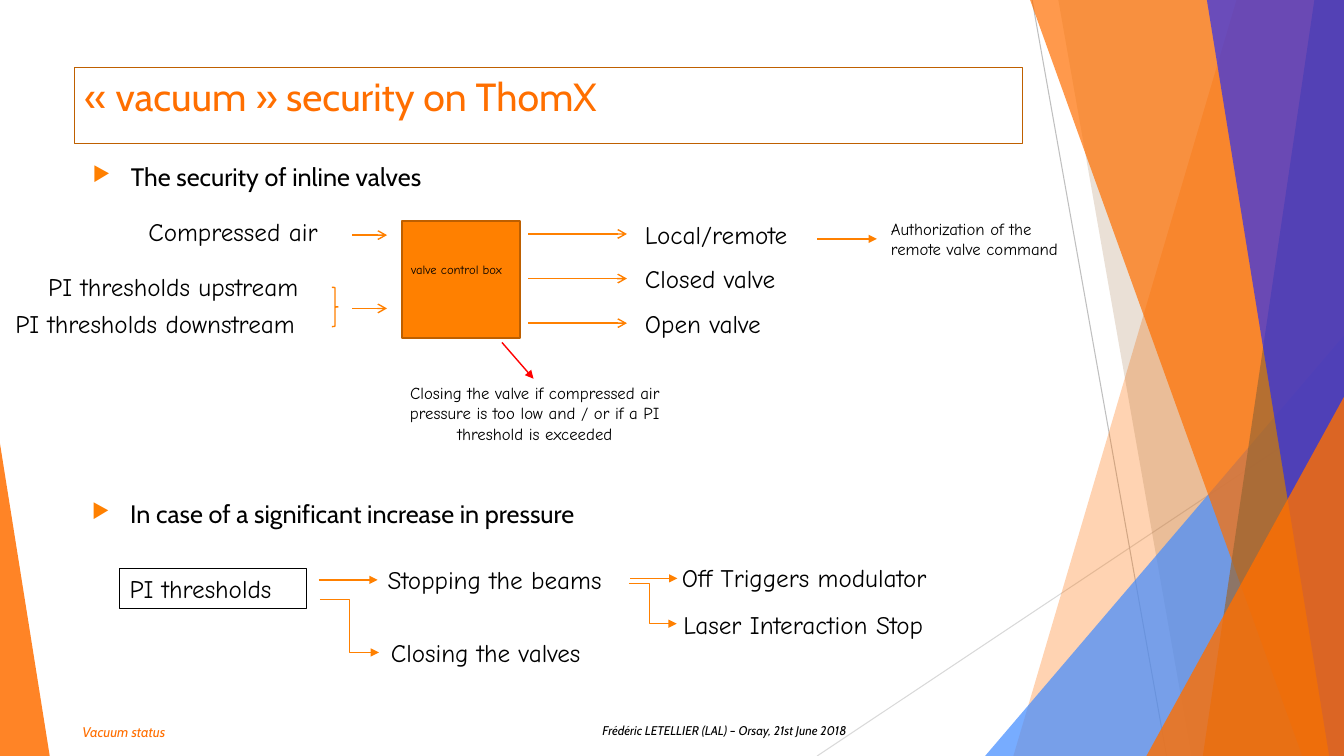
import dataclasses

import pptx
import pptx.dml.color
import pptx.enum.shapes
import pptx.enum.text
import pptx.oxml
import pptx.oxml.ns
import pptx.util

SHAPES = pptx.enum.shapes.MSO_SHAPE
CONNECTORS = pptx.enum.shapes.MSO_CONNECTOR
ALIGN = pptx.enum.text.PP_ALIGN
AUTO_SIZE = pptx.enum.text.MSO_AUTO_SIZE
WIDTH, HEIGHT = pptx.util.Inches(13.333), pptx.util.Inches(7.5)


@dataclasses.dataclass(frozen=True)
class Theme:
    orange: str = "FF6F00"
    flow: str = "FF8000"
    box_edge: str = "BD5F00"
    title_edge: str = "BF6000"
    brown: str = "996633"
    sky: str = "438CFF"
    blue: str = "1F29FD"
    red: str = "FF0000"
    black: str = "000000"
    pale_grey: str = "D9D9D9"
    grey: str = "BFBFBF"
    heading_font: str = "Cabin"
    label_font: str = "Comic Neue"
    title_size: int = 28
    body_size: int = 18
    note_size: int = 12
    footer_size: int = 10
    small_size: int = 9


THEME = Theme()


# Grid: 100 columns by 100 rows over the whole slide
def columns(count):
    return round(WIDTH * count / 100)


def rows(count):
    return round(HEIGHT * count / 100)


def grid_box(left, top, width, height):
    return columns(left), rows(top), columns(width), rows(height)


def color(value):
    return pptx.dml.color.RGBColor.from_string(value)


def add_xml(parent, tag, **attributes):
    element = pptx.oxml.parse_xml(f"<a:{tag} {pptx.oxml.ns.nsdecls('a')}/>")
    for name, value in attributes.items():
        element.set(name, str(value))
    parent.append(element)
    return element


# Text
def add_bullet(paragraph):
    properties = paragraph._element.get_or_add_pPr()
    indent = pptx.util.Inches(0.38)
    properties.set("marL", str(indent))
    properties.set("indent", str(-indent))
    add_xml(add_xml(properties, "buClr"), "srgbClr", val=THEME.flow)
    add_xml(properties, "buSzPct", val=80000)
    add_xml(properties, "buChar", char="▶")


def write_text(shape, text, size=THEME.body_size, font=THEME.label_font, ink=THEME.black,
               italic=False, align=ALIGN.LEFT, bullet=False, fit=AUTO_SIZE.SHAPE_TO_FIT_TEXT):
    frame = shape.text_frame
    frame.word_wrap = True
    frame.auto_size = fit
    frame.vertical_anchor = pptx.enum.text.MSO_ANCHOR.TOP
    frame.text = text
    paragraph = frame.paragraphs[0]
    paragraph.alignment = align
    if bullet:
        add_bullet(paragraph)
    paragraph.font.size = pptx.util.Pt(size)
    paragraph.font.name = font
    paragraph.font.italic = italic
    paragraph.font.color.rgb = color(ink)


def add_label(slide, text, left, top, width, height=5.3, **text_format):
    write_text(slide.shapes.add_textbox(*grid_box(left, top, width, height)), text, **text_format)


# Shapes and lines
def set_outline(shape, ink, weight):
    shape.line.color.rgb = color(ink)
    shape.line.width = pptx.util.Pt(weight)


def add_shape(slide, kind, place, edge, weight, fill=None):
    shape = slide.shapes.add_shape(kind, *grid_box(*place))
    shape.shadow.inherit = False
    if fill:
        shape.fill.solid()
        shape.fill.fore_color.rgb = color(fill)
    else:
        shape.fill.background()
    set_outline(shape, edge, weight)
    return shape


def add_facet(slide, points, fill, opacity):
    corners = [(columns(x), rows(y)) for x, y in points]
    builder = slide.shapes.build_freeform(*corners[0])
    builder.add_line_segments(corners[1:], close=True)
    shape = builder.convert_to_shape()
    shape.shadow.inherit = False
    shape.fill.solid()
    shape.fill.fore_color.rgb = color(fill)
    shape.line.fill.background()
    tint = shape._element.spPr.find(".//" + pptx.oxml.ns.qn("a:srgbClr"))
    add_xml(tint, "alpha", val=opacity * 1000)


def add_line(slide, start, end, ink=THEME.flow, weight=1, arrow=None, kind=CONNECTORS.STRAIGHT):
    connector = slide.shapes.add_connector(
        kind, columns(start[0]), rows(start[1]), columns(end[0]), rows(end[1]))
    set_outline(connector, ink, weight)
    properties = connector._element.spPr
    if arrow:
        add_xml(properties.find(pptx.oxml.ns.qn("a:ln")), "tailEnd", type=arrow)
    add_xml(properties, "effectLst")
    return connector


# Parts of the slide
def add_background(slide):
    add_line(slide, (60.8, 100), (99.9, 53.7), THEME.pale_grey, 0.75)
    add_line(slide, (76.8, 0), (86.8, 100), THEME.grey, 0.75)
    # Each right-hand facet runs from a slanted edge to the slide's right side
    for top_point, bottom, fill, opacity in [
        ((92, 0), 75.4, THEME.orange, 30),
        ((78.75, 0), 88.65, THEME.brown, 20),
        ((100, 44.4), 73.3, THEME.sky, 72),
        ((76.65, 0), 96.9, THEME.orange, 70),
        ((97.8, 0), 89.5, THEME.brown, 70),
        ((89.8, 0), 98.9, THEME.blue, 65),
        ((100, 52.5), 85.3, THEME.orange, 80),
    ]:
        add_facet(slide, [top_point, (bottom, 100), (100, 100), (100, top_point[1])], fill, opacity)
    add_facet(slide, [(0, 58.7), (3.7, 100), (0, 100)], THEME.orange, 85)


def add_title_and_footer(slide):
    title = slide.shapes.title
    title.left, title.top, title.width, title.height = grid_box(5.55, 8.9, 70.5, 10.1)
    set_outline(title, THEME.title_edge, 0.75)
    write_text(title, "« vacuum » security on ThomX", size=THEME.title_size,
               font=THEME.heading_font, ink=THEME.orange, fit=AUTO_SIZE.NONE)
    add_label(slide, "Vacuum status", 5.4, 95.1, 21.75, 3.6, size=THEME.footer_size,
              font=THEME.heading_font, ink=THEME.orange, italic=True)
    add_label(slide, "Frédéric LETELLIER (LAL) – Orsay, 21st June 2018", 35.1, 94.9, 28.6, 3.3,
              size=THEME.small_size, font=THEME.heading_font, italic=True, align=ALIGN.RIGHT)


def add_valve_security(slide):
    add_label(slide, "The security of inline valves", 6.15, 20.7, 31.2, 7.3,
              font=THEME.heading_font, bullet=True, fit=AUTO_SIZE.NONE)
    # Inputs
    add_label(slide, "Compressed air", 10.3, 28, 15.9)
    add_label(slide, "PI thresholds upstream", 2.85, 35.2, 23.7)
    add_label(slide, "PI thresholds downstream", 0.4, 40.1, 26.55)
    add_shape(slide, SHAPES.RIGHT_BRACE, (24.7, 38, 0.45, 5.2), THEME.flow, 1)
    for y in (31.1, 40.8):
        add_line(slide, (26.2, y), (28.8, y), arrow="arrow")
    # Control box
    add_shape(slide, SHAPES.RECTANGLE, (29.9, 29.2, 8.8, 15.5), THEME.box_edge, 1.5, THEME.flow)
    add_label(slide, "valve control box", 29.85, 34, 9.15, 3.35, size=THEME.small_size)
    # Outputs
    for index, output in enumerate(["Local/remote", "Closed valve", "Open valve"]):
        top = 28.3 + 5.9 * index
        add_line(slide, (39.3, top + 2.65), (46.65, top + 2.65), arrow="arrow")
        add_label(slide, output, 47.25, top, 14)
    add_line(slide, (60.8, 31.6), (65.25, 31.6), arrow="triangle")
    add_label(slide, "Authorization of the remote valve command", 65.55, 28.3, 15.15, 6.7,
              size=THEME.note_size)
    add_line(slide, (37.35, 45.3), (39.7, 50.1), THEME.red, arrow="triangle")
    add_label(slide, "Closing the valve if compressed air pressure is too low and / or if a PI "
              "threshold is exceeded", 29.4, 50, 20.8, 9.5, size=THEME.note_size,
              align=ALIGN.CENTER)


def add_pressure_response(slide):
    add_label(slide, "In case of a significant increase in pressure", 6.1, 65.3, 44.85, 5.7,
              font=THEME.heading_font, bullet=True, fit=AUTO_SIZE.NONE)
    thresholds = add_shape(slide, SHAPES.RECTANGLE, (8.9, 75.2, 13.9, 5.3), THEME.black, 0.75)
    write_text(thresholds, "PI thresholds")
    add_label(slide, "Stopping the beams", 28.1, 74, 20.55)
    add_label(slide, "Closing the valves", 28.35, 83.6, 19.4)
    add_label(slide, "Off Triggers modulator", 50, 73.7, 26.1)
    add_label(slide, "Laser Interaction Stop", 50.1, 80, 24.3)
    # Straight and bent branches
    add_line(slide, (23.7, 76.7), (28.1, 76.7), arrow="triangle")
    add_line(slide, (46.9, 76.5), (50.4, 76.5), arrow="triangle")
    for start, end, bend in [((23.8, 79.3), (28.2, 86.3), 50000),
                             ((46.8, 77.2), (50.35, 82.5), 43300)]:
        branch = add_line(slide, start, end, arrow="triangle", kind=CONNECTORS.ELBOW)
        adjustments = branch._element.spPr.find(".//" + pptx.oxml.ns.qn("a:avLst"))
        add_xml(adjustments, "gd", name="adj1", fmla=f"val {bend}")


def main():
    presentation = pptx.Presentation()
    presentation.slide_width, presentation.slide_height = WIDTH, HEIGHT
    slide = presentation.slides.add_slide(presentation.slide_layouts.get_by_name("Title Only"))
    add_background(slide)
    add_title_and_footer(slide)
    add_valve_security(slide)
    add_pressure_response(slide)
    presentation.save("out.pptx")


if __name__ == "__main__":
    main()
